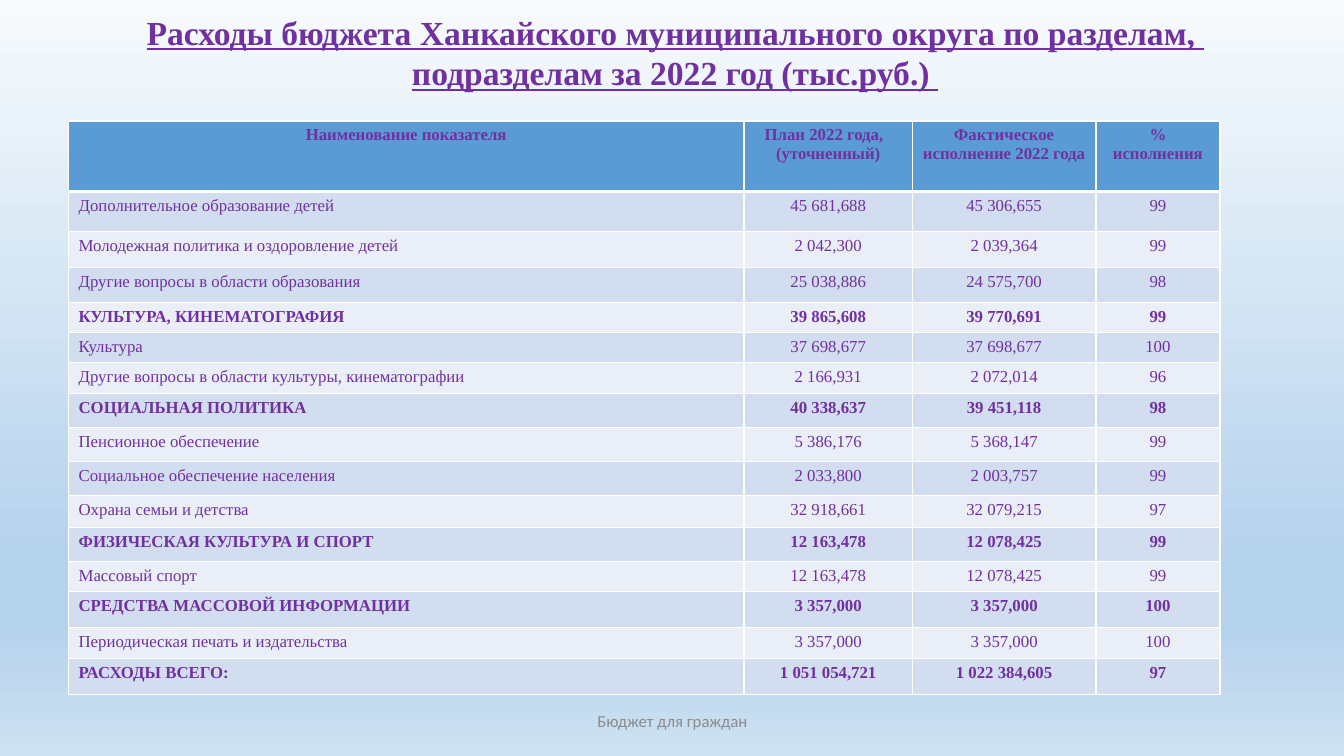
from lxml.etree import SubElement
from pptx import Presentation
from pptx.dml.color import RGBColor
from pptx.enum.text import MSO_ANCHOR, PP_ALIGN
from pptx.oxml.ns import qn
from pptx.util import Inches, Pt

COLORS = {
    "text": "7030A0",
    "footer": "8C8C8C",
    "header": "5B9BD5",
    "band_dark": "D2DEEF",
    "band_light": "EAEFF7",
    "border": "FFFFFF",
}
BACKGROUND_STOPS = [(0, "F7FAFD"), (74, "B5D2EC"), (83, "B5D2EC"), (100, "CEE1F2")]
SERIF = "Times New Roman"

TITLE = [
    "Расходы бюджета Ханкайского муниципального округа по разделам, ",
    "подразделам за 2022 год (тыс.руб.) ",
]
HEADER = (
    "Наименование показателя",
    "План 2022 года,  \n(уточненный)",
    "Фактическое исполнение 2022 года",
    "% исполнения",
)
EXPENSES = [
    ("Дополнительное образование детей", "45 681,688", "45 306,655", "99"),
    ("Молодежная политика и оздоровление детей", "2 042,300", "2 039,364", "99"),
    ("Другие вопросы в области образования", "25 038,886", "24 575,700", "98"),
    ("КУЛЬТУРА, КИНЕМАТОГРАФИЯ", "39 865,608", "39 770,691", "99"),
    ("Культура", "37 698,677", "37 698,677", "100"),
    ("Другие вопросы в области культуры, кинематографии", "2 166,931", "2 072,014", "96"),
    ("СОЦИАЛЬНАЯ ПОЛИТИКА", "40 338,637", "39 451,118", "98"),
    ("Пенсионное обеспечение", "5 386,176", "5 368,147", "99"),
    ("Социальное обеспечение населения", "2 033,800", "2 003,757", "99"),
    ("Охрана семьи и детства", "32 918,661", "32 079,215", "97"),
    ("ФИЗИЧЕСКАЯ КУЛЬТУРА И СПОРТ", "12 163,478", "12 078,425", "99"),
    ("Массовый спорт", "12 163,478", "12 078,425", "99"),
    ("СРЕДСТВА МАССОВОЙ ИНФОРМАЦИИ", "3 357,000", "3 357,000", "100"),
    ("Периодическая печать и издательства", "3 357,000", "3 357,000", "100"),
    ("РАСХОДЫ ВСЕГО:", "1 051 054,721", "1 022 384,605", "97"),
]
COL_WIDTHS = [6.7, 1.67, 1.82, 1.23]
ROW_HEIGHTS = [0.7, 0.4, 0.35, 0.35, 0.3, 0.3, 0.3, 0.34,
               0.34, 0.34, 0.31, 0.34, 0.3, 0.36, 0.3, 0.36]


def rgb(name):
    return RGBColor.from_string(COLORS[name])


def set_background(s):
    fill = s.background.fill
    fill.gradient()
    fill.gradient_angle = 270
    stops = s._element.find(".//" + qn("a:gsLst"))
    for stop in list(stops):
        stops.remove(stop)
    for percent, color in BACKGROUND_STOPS:
        stop = SubElement(stops, qn("a:gs"), pos=str(percent * 1000))
        SubElement(stop, qn("a:srgbClr"), val=color)


def write_text(tf, lines, size, font, color, align, bold=False, underline=None):
    tf.text = "\n".join(lines)
    for p in tf.paragraphs:
        p.alignment = align
        p.font.size = Pt(size)
        p.font.name = font
        p.font.bold = bold
        p.font.underline = underline
        p.font.color.rgb = rgb(color)


def add_text(s, box, lines, anchor, **style):
    tf = s.shapes.add_textbox(*map(Inches, box)).text_frame
    tf.word_wrap = True
    tf.vertical_anchor = anchor
    write_text(tf, lines, align=PP_ALIGN.CENTER, **style)


def set_borders(cell, top, bottom):
    tc_pr = cell._tc.get_or_add_tcPr()
    for side, width in (("L", 1), ("R", 1), ("T", top), ("B", bottom)):
        line = SubElement(tc_pr, qn("a:ln" + side), w=str(Pt(width)))
        fill = SubElement(line, qn("a:solidFill"))
        SubElement(fill, qn("a:srgbClr"), val=COLORS["border"])


def fill_cell(cell, text, row, col, bold):
    set_borders(cell, top=3 if row == 1 else 1, bottom=3 if row == 0 else 1)
    band = "header" if row == 0 else "band_dark" if row % 2 else "band_light"
    cell.fill.solid()
    cell.fill.fore_color.rgb = rgb(band)
    align = PP_ALIGN.LEFT if row and col == 0 else PP_ALIGN.CENTER
    write_text(cell.text_frame, text.split("\n"), 12, SERIF, "text", align, bold)


def add_expense_table(s):
    rows = [HEADER] + EXPENSES
    box = map(Inches, (0.68, 1.2, sum(COL_WIDTHS), sum(ROW_HEIGHTS)))
    table = s.shapes.add_table(len(rows), len(HEADER), *box).table
    for column, width in zip(table.columns, COL_WIDTHS):
        column.width = Inches(width)
    for i, (values, height) in enumerate(zip(rows, ROW_HEIGHTS)):
        table.rows[i].height = Inches(height)
        bold = i == 0 or values[0].isupper()
        for j, text in enumerate(values):
            fill_cell(table.cell(i, j), text, i, j, bold)


def main():
    prs = Presentation()
    prs.slide_width = Inches(13.33)
    prs.slide_height = Inches(7.5)
    s = prs.slides.add_slide(prs.slide_layouts[6])
    set_background(s)
    add_expense_table(s)
    add_text(s, (0.32, 0.07, 12.75, 0.91), TITLE, MSO_ANCHOR.TOP,
             size=24, font=SERIF, color="text", bold=True, underline=True)
    add_text(s, (4.42, 6.95, 4.5, 0.4), ["Бюджет для граждан"], MSO_ANCHOR.MIDDLE,
             size=12, font="Calibri", color="footer")
    prs.save("out.pptx")


if __name__ == "__main__":
    main()
